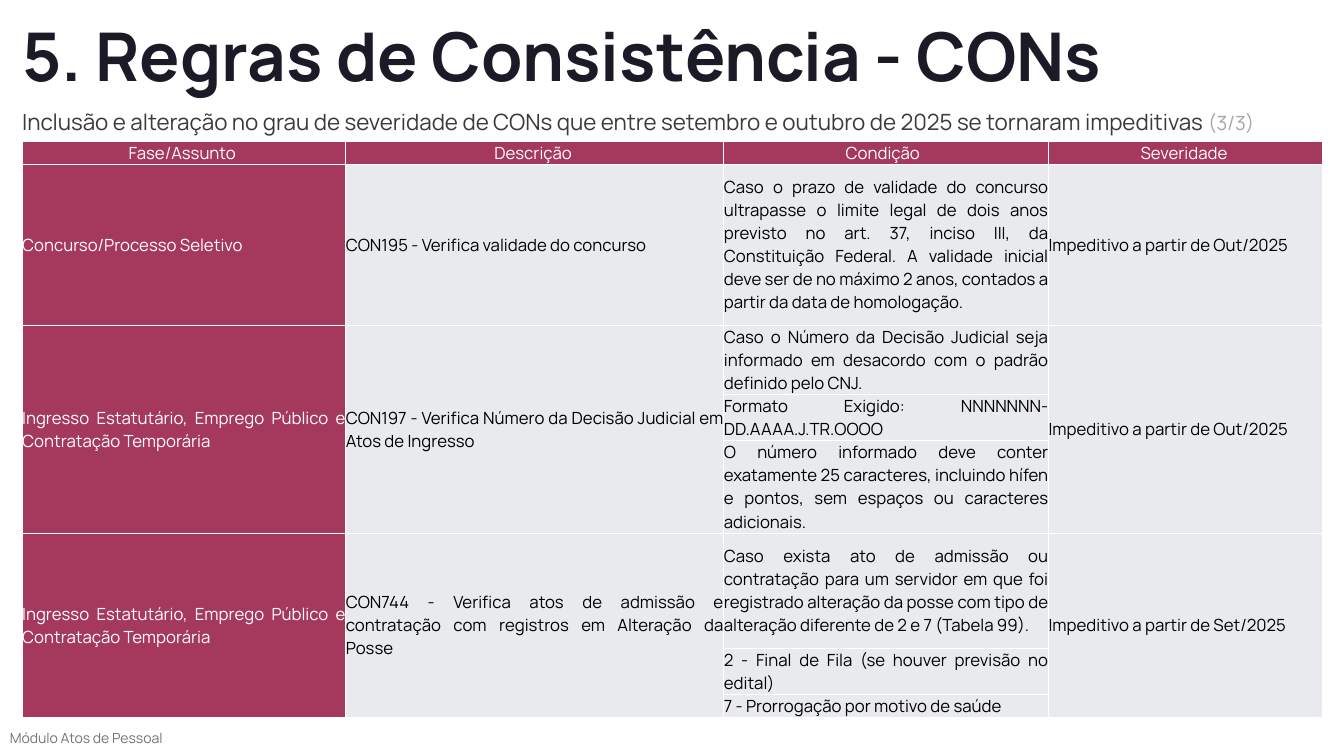
from lxml import etree
from pptx import Presentation
from pptx.dml.color import RGBColor
from pptx.enum.text import MSO_ANCHOR, MSO_AUTO_SIZE, PP_ALIGN
from pptx.oxml.ns import qn
from pptx.util import Inches, Pt

LEFT, CENTER, JUSTIFY = PP_ALIGN.LEFT, PP_ALIGN.CENTER, PP_ALIGN.JUSTIFY
TOP, MIDDLE = MSO_ANCHOR.TOP, MSO_ANCHOR.MIDDLE
NO_FIT = MSO_AUTO_SIZE.NONE

WINE, GRAY, WHITE, BLACK = "A5395D", "E8EAED", "FFFFFF", "000000"
MARGIN = 1.65  # left edge, in percent of the slide width
TABLE_WIDTH = 96.77
COLUMN_WIDTHS = [24.08, 28.13, 24.16, 20.4]
LINE_HEIGHT = 3.05  # one line of table text, in percent of the slide height
ROW_LINES = [1, 7, 3, 2, 4, 5, 2, 1]

HEADERS = ["Fase/Assunto ", "Descrição ", "Condição  ", "Severidade "]
ADMISSION = "Ingresso Estatutário, Emprego Público e Contratação Temporária"
# Subject, description, conditions (one table row each), severity
RULES = [
    ("Concurso/Processo Seletivo",
     "CON195 - Verifica validade do concurso",
     ["Caso o prazo de validade do concurso ultrapasse o limite legal de dois anos "
      "previsto no art. 37, inciso III, da Constituição Federal. A validade inicial "
      "deve ser de no máximo 2 anos, contados a partir da data de homologação."],
     "Impeditivo a partir de Out/2025"),
    (ADMISSION,
     "CON197 - Verifica Número da Decisão Judicial em Atos de Ingresso",
     ["Caso o Número da Decisão Judicial seja informado em desacordo com o padrão "
      "definido pelo CNJ.",
      "Formato Exigido: NNNNNNN-DD.AAAA.J.TR.OOOO",
      "O número informado deve conter exatamente 25 caracteres, incluindo hífen e "
      "pontos, sem espaços ou caracteres adicionais."],
     "Impeditivo a partir de Out/2025"),
    (ADMISSION,
     "CON744 - Verifica atos de admissão e contratação com registros em Alteração da Posse",
     ["Caso exista ato de admissão ou contratação para um servidor em que foi "
      "registrado alteração da posse com tipo de alteração diferente de 2 e 7 (Tabela 99).",
      "2 - Final de Fila (se houver previsão no edital)",
      "7 - Prorrogação por motivo de saúde"],
     "Impeditivo a partir de Set/2025"),
]


def color(value):
    return RGBColor.from_string(value)


def set_attributes(target, values):
    for name, value in values.items():
        setattr(target, name, value)


class SlideBuilder:
    """Holds the slide and its style; lengths are percents of the slide size."""

    font = "Manrope"
    no_margins = dict.fromkeys(
        ["margin_left", "margin_top", "margin_right", "margin_bottom"], 0)

    def __init__(self, presentation):
        self.width = presentation.slide_width
        self.height = presentation.slide_height
        self.slide = presentation.slides.add_slide(presentation.slide_layouts[5])

    def across(self, percent):
        return round(self.width * percent / 100)

    def down(self, percent):
        return round(self.height * percent / 100)

    def box(self, left, top, width, height):
        return (self.across(left), self.down(top), self.across(width), self.down(height))

    def add_runs(self, paragraph, runs, **paragraph_format):
        """Add runs given as (text, size, color, bold)."""
        set_attributes(paragraph, paragraph_format)
        for text, size, ink, bold in runs:
            run = paragraph.add_run()
            run.text = text
            set_attributes(run.font, {"name": self.font, "size": Pt(size), "bold": bold})
            run.font.color.rgb = color(ink)

    def title(self, text, box):
        shape = self.slide.shapes.title
        set_attributes(shape, dict(zip(["left", "top", "width", "height"], self.box(*box))))
        set_attributes(shape.text_frame, {
            **self.no_margins, "word_wrap": False,
            "auto_size": NO_FIT, "vertical_anchor": TOP})
        self.add_runs(shape.text_frame.paragraphs[0], [(text, 48, "1B1B27", True)],
                      alignment=LEFT, line_spacing=Pt(46.2))

    def text(self, runs, box, frame_format, **paragraph_format):
        frame = self.slide.shapes.add_textbox(*self.box(*box)).text_frame
        set_attributes(frame, {"word_wrap": True, **frame_format})
        self.add_runs(frame.paragraphs[0], runs, **paragraph_format)

    def borders(self, cell):
        properties = cell._tc.get_or_add_tcPr()
        for position, side in enumerate(["a:lnL", "a:lnR", "a:lnT", "a:lnB"]):
            line = etree.Element(qn(side), w=str(Pt(1)))
            fill = etree.SubElement(line, qn("a:solidFill"))
            etree.SubElement(fill, qn("a:srgbClr"), val=WHITE)
            properties.insert(position, line)

    def cell(self, cell, text, alignment, fill, ink):
        set_attributes(cell, {**self.no_margins, "vertical_anchor": MIDDLE})
        cell.fill.solid()
        cell.fill.fore_color.rgb = color(fill)
        self.borders(cell)
        runs = [(text, 12, ink, False)] if text else []
        self.add_runs(cell.text_frame.paragraphs[0], runs, alignment=alignment)

    def rules_table(self, top):
        height = LINE_HEIGHT * sum(ROW_LINES)
        table = self.slide.shapes.add_table(
            len(ROW_LINES), len(COLUMN_WIDTHS),
            *self.box(MARGIN, top, TABLE_WIDTH, height)).table
        table.horz_banding = False
        for column, width in zip(table.columns, COLUMN_WIDTHS):
            column.width = self.across(width)
        for row, lines in zip(table.rows, ROW_LINES):
            row.height = self.down(LINE_HEIGHT * lines)

        for column, header in enumerate(HEADERS):
            self.cell(table.cell(0, column), header, CENTER, WINE, WHITE)
        first = 1
        for subject, description, conditions, severity in RULES:
            for offset, condition in enumerate(conditions):
                texts = [subject, description, condition, severity]
                for column, text in enumerate(texts):
                    shown = text if offset == 0 or column == 2 else ""
                    fill, ink = (WINE, WHITE) if column == 0 else (GRAY, BLACK)
                    self.cell(table.cell(first + offset, column), shown, JUSTIFY, fill, ink)
            last = first + len(conditions) - 1
            if last > first:
                for column in (0, 1, 3):
                    table.cell(first, column).merge(table.cell(last, column))
            first = last + 1


def main():
    presentation = Presentation()
    presentation.slide_width = Inches(13.33)
    presentation.slide_height = Inches(7.5)
    builder = SlideBuilder(presentation)
    builder.text([("Módulo Atos de Pessoal", 10, "747474", False)],
                 (0, 96.13, 95.65, 2.93), {}, line_spacing=0.9)
    builder.title("5. Regras de Consistência - CONs", (MARGIN, 4, 81, 8.67))
    builder.rules_table(18.67)
    builder.text(
        [("Inclusão e alteração no grau de severidade de CONs que entre setembro e "
          "outubro de 2025 se tornaram impeditivas ", 16, "3C3939", False),
         ("(3/3)", 14, "A6A6A6", False)],
        (MARGIN, 13.47, TABLE_WIDTH, 5.73), builder.no_margins,
        alignment=JUSTIFY, line_spacing=Pt(23.7))
    presentation.save("out.pptx")


if __name__ == "__main__":
    main()
